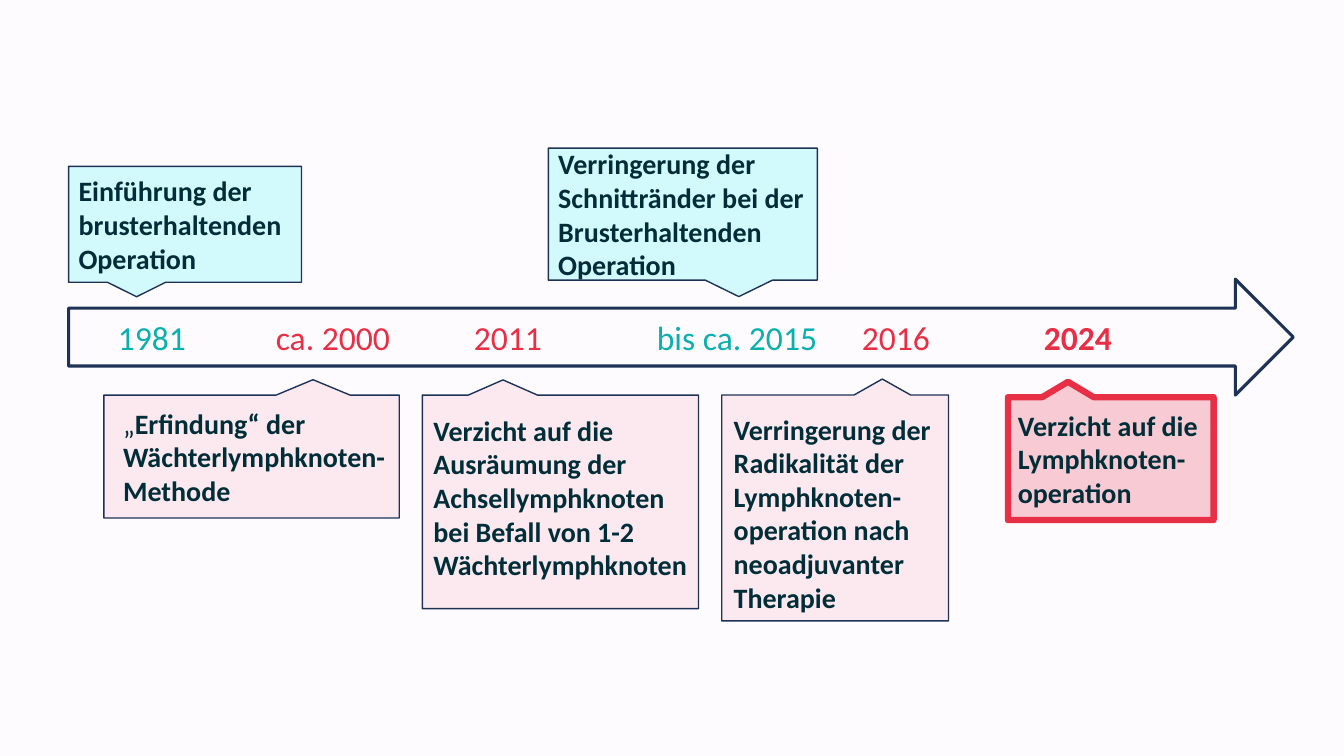
"""Build a timeline slide on the development of breast cancer surgery."""
from lxml import etree
from pptx import Presentation
from pptx.dml.color import RGBColor
from pptx.enum import shapes, text
from pptx.oxml import ns
from pptx.util import Pt

COLORS = {"background": "FEFBFF", "navy": "1E3256", "ink": "002D37",
          "aqua": "D2F9FC", "rose": "F8CAD3", "teal": "0BB0AE", "red": "E72F45"}
FONT = "Calibri"

YEARS = [
    ("1981", 84.3, "teal"),
    ("ca. 2000", 197.1, "red"),
    ("2011", 338.6, "red"),
    ("bis ca. 2015", 469.3, "teal"),
    ("2016", 615.7, "red"),
    ("2024", 745.7, "red"),
]
YEARS_BOX = (56.2, 222.5, 832.3, 36)
ARROW_BOX = (49, 199.4, 874.8, 82.8)
SIDE_INSET = 7.2

TIP_X, TIP_Y, SHORT_TIP_Y = 0.208, 0.625, 0.571
MIDDLE = (SIDE_INSET, 3.6, SIDE_INSET)

ABOVE = [
    ("Einführung der brusterhaltenden Operation",
     (49, 118.8, 166.3, 82.8), -TIP_X),
    ("Verringerung der Schnittränder bei der Brusterhaltenden Operation",
     (391.7, 105.8, 192.2, 94.3), TIP_X),
]
BELOW = [
    ("„", "Erfindung“ der Wächterlymphknoten-Methode",
     (74.2, 282.2, 211, 87.8), (TIP_X, -TIP_Y), (13.7, 7.9, SIDE_INSET)),
    ("", "Verzicht auf die Ausräumung der Achsellymphknoten bei Befall von 1-2 "
     "Wächterlymphknoten",
     (301.7, 282.2, 197.3, 152.6), (-TIP_X, -SHORT_TIP_Y), (7.9, 13, 0)),
    ("", "Verringerung der Radikalität der Lymphknoten-operation nach "
     "neoadjuvanter Therapie",
     (515.5, 282.2, 162, 161.3), (TIP_X, -SHORT_TIP_Y), (8.6, 12.2, SIDE_INSET)),
]
LATEST = ("", "Verzicht auf die Lymphknoten-operation",
          (720, 283.7, 146.9, 87.8), (-TIP_X, -TIP_Y), (SIDE_INSET, 7.9, SIDE_INSET))


def rgb(name):
    return RGBColor.from_string(COLORS[name])


def points(box):
    return [Pt(length) for length in box]


def outline(shape, color, width):
    shape.shadow.inherit = False
    shape.line.color.rgb = rgb(color)
    shape.line.width = Pt(width)


def add_run(paragraph, words, size, color, bold):
    run = paragraph.add_run()
    run.text = words
    run.font.name, run.font.size, run.font.bold = FONT, Pt(size), bold
    run.font.color.rgb = rgb(color)


def add_callout(slide, lead, words, box, tip, insets, fill, anchor,
                line=("navy", 1), opacity=None):
    callout = slide.shapes.add_shape(
        shapes.MSO_SHAPE.RECTANGULAR_CALLOUT, *points(box))
    callout.adjustments[0], callout.adjustments[1] = tip
    outline(callout, *line)
    callout.fill.solid()
    callout.fill.fore_color.rgb = rgb(fill)
    if opacity:
        color = callout.fill._xPr.find(".//" + ns.qn("a:srgbClr"))
        etree.SubElement(color, ns.qn("a:alpha"), val=str(opacity * 1000))
    frame = callout.text_frame
    frame.word_wrap = True
    frame.vertical_anchor = anchor
    frame.margin_left, frame.margin_top, frame.margin_right = points(insets)
    paragraph = frame.paragraphs[0]
    paragraph.alignment = text.PP_ALIGN.LEFT
    if lead:
        add_run(paragraph, lead, 20, "ink", False)
    add_run(paragraph, words, 20, "ink", True)


def add_years(slide):
    frame = slide.shapes.add_textbox(*points(YEARS_BOX)).text_frame
    frame.word_wrap = True
    paragraph = frame.paragraphs[0]
    tabs = etree.SubElement(paragraph._p.get_or_add_pPr(), ns.qn("a:tabLst"))
    for year, left, color in YEARS:
        stop = Pt(left - YEARS_BOX[0] - SIDE_INSET)
        etree.SubElement(tabs, ns.qn("a:tab"), pos=str(int(stop)), algn="l")
        add_run(paragraph, "\t" + year, 24, color, year == YEARS[-1][0])


def main():
    deck = Presentation()
    deck.slide_width, deck.slide_height = Pt(960), Pt(540)
    slide = deck.slides.add_slide(deck.slide_layouts[6])
    slide.background.fill.solid()
    slide.background.fill.fore_color.rgb = rgb("background")

    arrow = slide.shapes.add_shape(shapes.MSO_SHAPE.RIGHT_ARROW, *points(ARROW_BOX))
    arrow.fill.background()
    outline(arrow, "navy", 2.25)
    add_years(slide)

    for words, box, tip_x in ABOVE:
        add_callout(slide, "", words, box, (tip_x, TIP_Y), MIDDLE, "aqua",
                    text.MSO_ANCHOR.MIDDLE)
    for milestone in BELOW:
        add_callout(slide, *milestone, "rose", text.MSO_ANCHOR.TOP, opacity=35)
    add_callout(slide, *LATEST, "rose", text.MSO_ANCHOR.TOP, line=("red", 4.5))

    deck.save("out.pptx")


if __name__ == "__main__":
    main()
